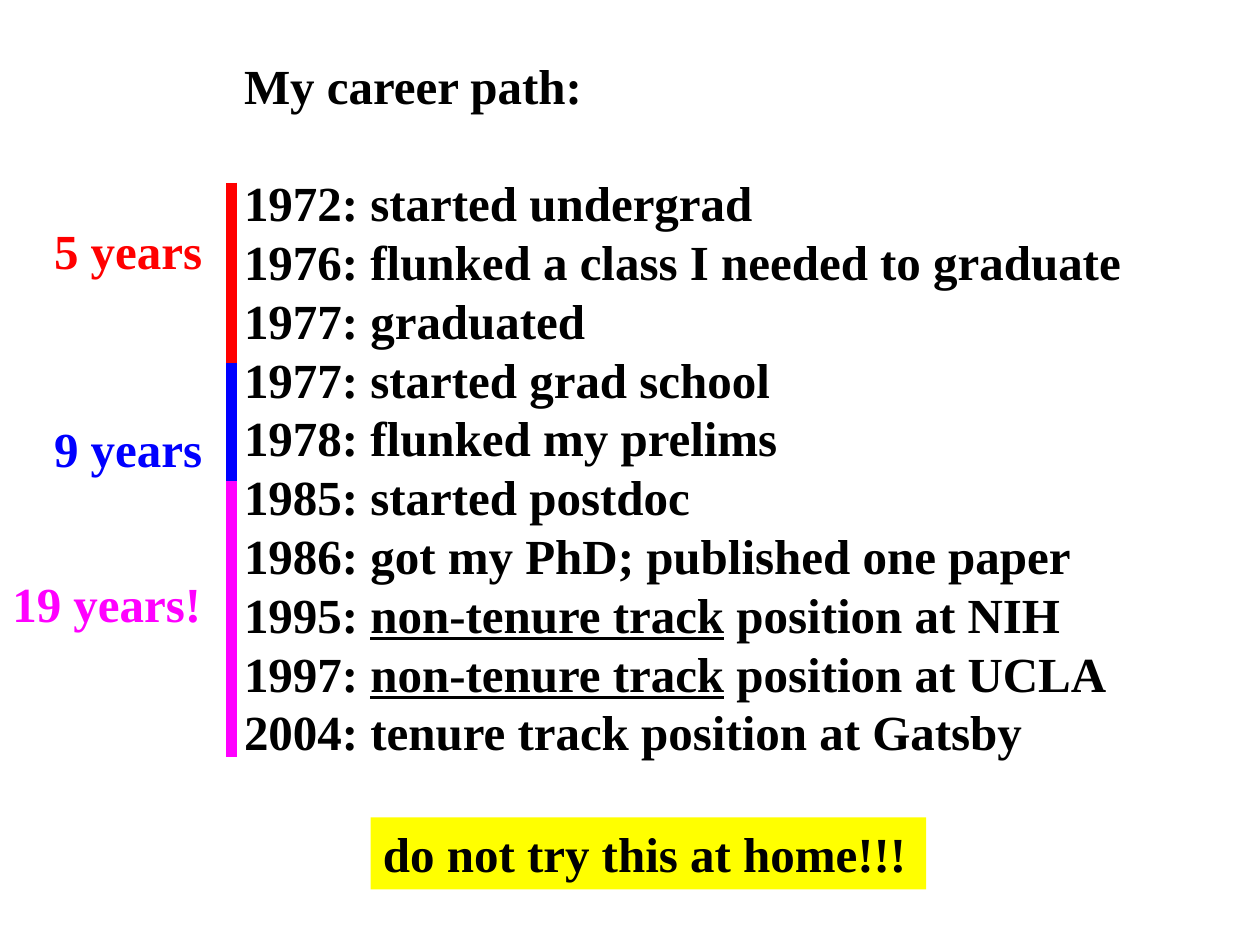
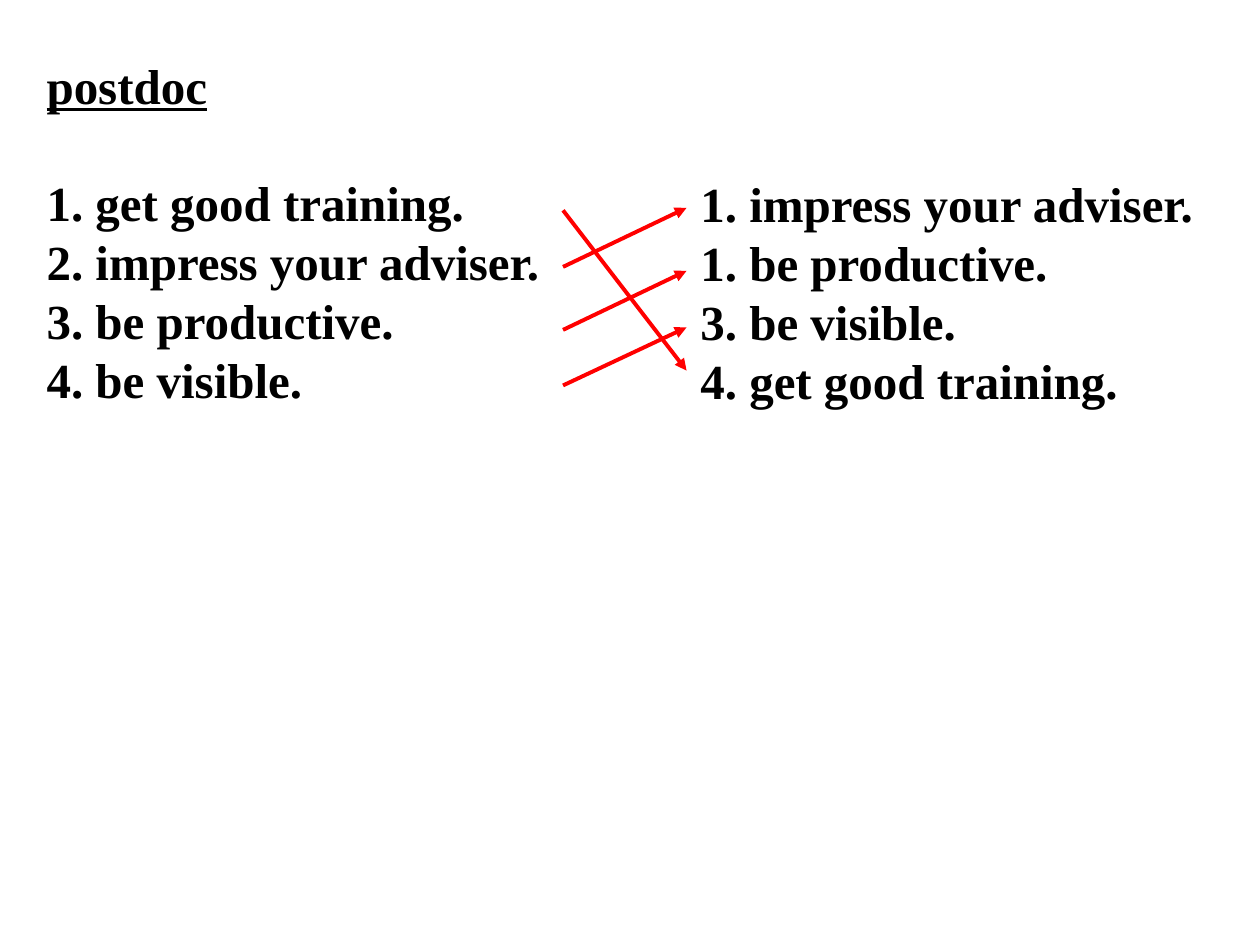
import dataclasses

import lxml.etree
import pptx
import pptx.dml.color
import pptx.enum.shapes
import pptx.enum.text
import pptx.oxml.ns
import pptx.util

Cm, Pt = pptx.util.Cm, pptx.util.Pt
RGB = pptx.dml.color.RGBColor.from_string


@dataclasses.dataclass(frozen=True)
class Theme:
    font: str = "Times New Roman"
    size: float = 28
    leading: float = 33.6
    bar: float = 6
    arrow: float = 2.25
    black: str = "000000"
    red: str = "FF0000"
    blue: str = "0000FF"
    magenta: str = "FF00FF"
    yellow: str = "FFFF00"


T = Theme()

# Text between underscores is underlined.
CAREER_TITLE = "My career path:"
CAREER = [
    "1972: started undergrad",
    "1976: flunked a class I needed to graduate",
    "1977: graduated",
    "1977: started grad school",
    "1978: flunked my prelims",
    "1985: started postdoc",
    "1986: got my PhD; published one paper",
    "1995: _non-tenure track_ position at NIH",
    "1997: _non-tenure track_ position at UCLA",
    "2004: tenure track position at Gatsby",
]
WARNING = "do not try this at home!!!"
# label, colour, label top, label width, bar top, bar bottom (cm)
PHASES = [
    ("5 years", T.red, 4.32, 3.53, 3.68, 7.32),
    ("9 years", T.blue, 8.31, 3.53, 7.32, 11.61),
    ("19 years!", T.magenta, 11.43, 4.37, 9.7, 15.27),
]

POSTDOC_TITLE = "_postdoc_"
ADVICE = ["1. get good training.", "2. impress your adviser.",
          "3. be productive.", "4. be visible."]
REORDERED = ["1. impress your adviser.", "1. be productive.",
             "3. be visible.", "4. get good training."]
# start height, end height (cm)
MOVES = [(5.38, 4.19), (6.65, 5.46), (7.77, 6.6), (4.24, 7.47)]

TOP = 0.99
LABEL_H = 1.45
LABEL_RIGHT = 4.37
BAR_X = 4.67
ARROW_X = (11.35, 13.84)


def write(s, lines, color=T.black, wrap=True, title=False):
    """Fill s with one paragraph a line; a title is followed by a blank line's height."""
    tf = s.text_frame
    frame_format = {"word_wrap": wrap,
                    "auto_size": pptx.enum.text.MSO_AUTO_SIZE.SHAPE_TO_FIT_TEXT,
                    "vertical_anchor": pptx.enum.text.MSO_ANCHOR.TOP}
    for name, value in frame_format.items():
        setattr(tf, name, value)
    for i, line in enumerate(lines):
        p = tf.add_paragraph() if i else tf.paragraphs[0]
        p.alignment = pptx.enum.text.PP_ALIGN.LEFT
        p.line_spacing = Pt(T.leading)
        if title and i == 0:
            p.space_after = Pt(T.leading)
        for j, part in enumerate(line.split("_")):
            if not part:
                continue
            r = p.add_run()
            r.text = part
            run_format = {"name": T.font, "size": Pt(T.size), "bold": True,
                          "underline": j % 2 == 1}
            for name, value in run_format.items():
                setattr(r.font, name, value)
            r.font.color.rgb = RGB(color)


def add_text(slide, box, lines, **style):
    s = slide.shapes.add_textbox(*map(Cm, box))
    write(s, lines, **style)


def add_line(slide, ends, color, width, arrow=False):
    c = slide.shapes.add_connector(
        pptx.enum.shapes.MSO_CONNECTOR.STRAIGHT, *map(Cm, ends))
    c.line.color.rgb = RGB(color)
    c.line.width = Pt(width)
    qn = pptx.oxml.ns.qn
    sp_pr = c._element.spPr
    if arrow:
        lxml.etree.SubElement(sp_pr.find(qn("a:ln")), qn("a:tailEnd"), type="triangle")
    lxml.etree.SubElement(sp_pr, qn("a:effectLst"))


def build_career(slide):
    add_text(slide, (BAR_X, TOP, 18.9, 14.63), [CAREER_TITLE] + CAREER, title=True)
    for _, color, _, _, top, bottom in PHASES:
        add_line(slide, (BAR_X, top, BAR_X, bottom), color, T.bar)
    for label, color, top, width, _, _ in PHASES:
        add_text(slide, (LABEL_RIGHT - width, top, width, LABEL_H), [label],
                 color=color, wrap=False)
    s = slide.shapes.add_shape(pptx.enum.shapes.MSO_SHAPE.RECTANGLE,
                               *map(Cm, (7.47, 16.48, 11.2, LABEL_H)))
    s.shadow.inherit = False
    s.fill.solid()
    s.fill.fore_color.rgb = RGB(T.yellow)
    s.line.fill.background()
    write(s, [WARNING], wrap=False)


def build_postdoc(slide):
    add_text(slide, (0.69, TOP, 23.75, 7.44), [POSTDOC_TITLE] + ADVICE, title=True)
    add_text(slide, (13.87, 3.38, 11, 5.05), REORDERED)
    left, right = ARROW_X
    for start, end in MOVES:
        add_line(slide, (left, start, right, end), T.red, T.arrow, arrow=True)


def main():
    prs = pptx.Presentation()
    prs.slide_width, prs.slide_height = Cm(25.4), Cm(19.05)
    for build in (build_career, build_postdoc):
        build(prs.slides.add_slide(prs.slide_layouts[6]))
    prs.save("out.pptx")


if __name__ == "__main__":
    main()
